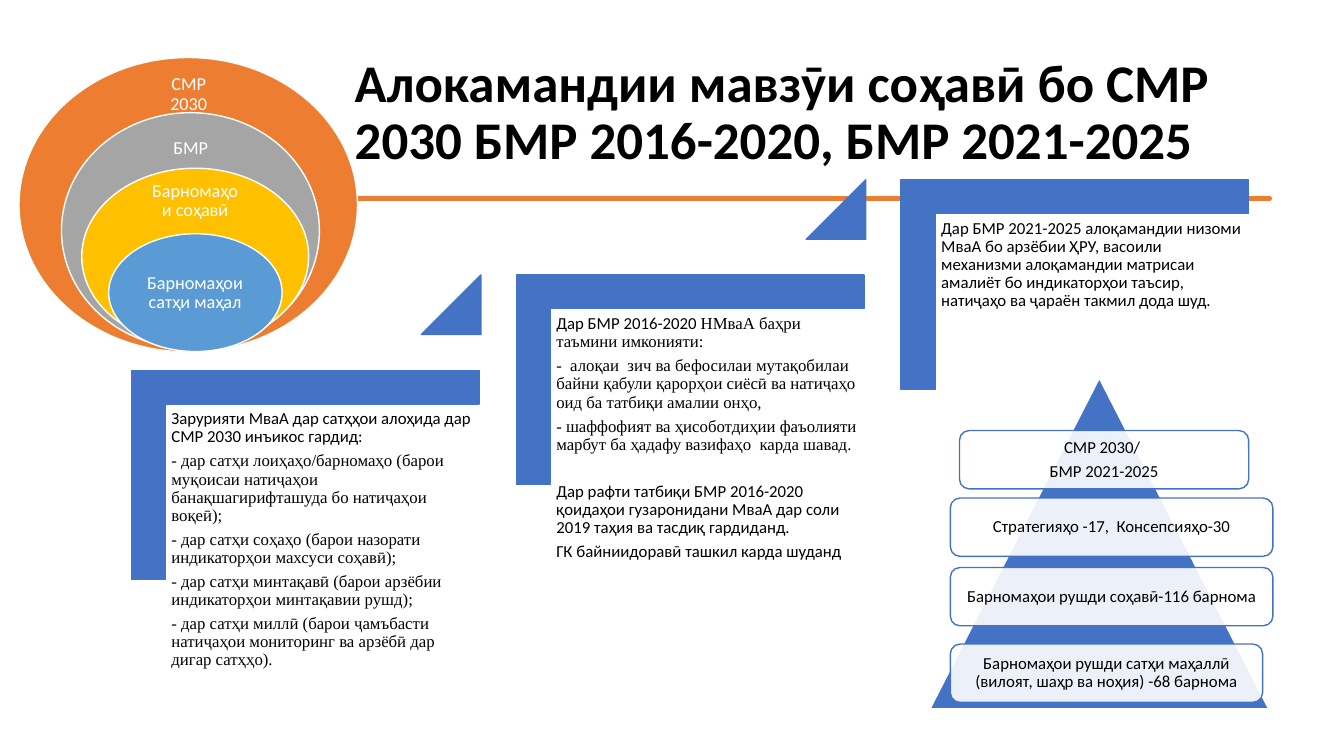
import pptx
import pptx.util
import pptx.dml.color
import pptx.enum.shapes
import pptx.enum.text
import pptx.oxml.ns
import lxml.etree

Cm = pptx.util.Cm
Pt = pptx.util.Pt
RGBColor = pptx.dml.color.RGBColor
SHAPE = pptx.enum.shapes.MSO_SHAPE
ALIGN = pptx.enum.text.PP_ALIGN
ANCHOR = pptx.enum.text.MSO_ANCHOR

BLACK = RGBColor(0x00, 0x00, 0x00)
WHITE = RGBColor(0xFF, 0xFF, 0xFF)
BLUE = RGBColor(0x44, 0x72, 0xC4)
LIGHT_BLUE = RGBColor(0x5B, 0x9B, 0xD5)
ORANGE = RGBColor(0xED, 0x7D, 0x31)
GRAY = RGBColor(0xA5, 0xA5, 0xA5)
GOLD = RGBColor(0xFF, 0xC0, 0x00)
SANS = "Calibri"
SERIF = "Times New Roman"


def write(frame, paras, size=12, color=BLACK, bold=False, align=ALIGN.LEFT,
          anchor=ANCHOR.TOP, margin=0.13, after=4.2):
    frame.word_wrap = True
    frame.auto_size = pptx.enum.text.MSO_AUTO_SIZE.NONE
    frame.vertical_anchor = anchor
    frame.margin_left = frame.margin_right = Cm(margin)
    frame.margin_top = frame.margin_bottom = Cm(margin)
    for index, spans in enumerate(paras):
        para = frame.paragraphs[0] if index == 0 else frame.add_paragraph()
        para.alignment = align
        para.line_spacing = 0.9
        para.space_before = Pt(0)
        para.space_after = Pt(after)
        for text, font in spans:
            span = para.add_run()
            span.text = text
            span.font.name = font
            span.font.size = Pt(size)
            span.font.bold = bold
            span.font.color.rgb = color


def add_figure(kind, box, fill, line):
    figure = page.shapes.add_shape(kind, *map(Cm, box))
    figure.shadow.inherit = False
    figure.fill.solid()
    figure.fill.fore_color.rgb = fill
    figure.line.color.rgb = line
    figure.line.width = Pt(1)
    return figure


deck = pptx.Presentation()
deck.slide_width = Cm(33.87)
deck.slide_height = Cm(19.05)
page = deck.slides.add_slide(deck.slide_layouts[5])

title = page.shapes.title
title.left, title.top, title.width, title.height = map(Cm, (8.69, 1.02, 22.86, 3.68))
write(title.text_frame,
      [[("Алокамандии мавзӯи соҳавӣ бо СМР 2030 БМР 2016-2020, БМР 2021-2025", SANS)]],
      size=37.8, bold=True, anchor=ANCHOR.MIDDLE, margin=0.25, after=0)

upper_edge = [(1.85, 4.65), (3.2, 4.65), (5, 4.66), (7.2, 4.63), (9.2, 4.66),
              (10.4, 4.62), (11.6, 4.62), (12.6, 4.68), (14.5, 4.63), (16.4, 4.66),
              (18.9, 4.64), (20.5, 4.67), (22, 4.64), (23.4, 4.62), (24.6, 4.67),
              (26.1, 4.65), (28, 4.62), (29.2, 4.66), (30.4, 4.64), (32, 4.65)]
lower_edge = [(32, 4.7), (30.7, 4.73), (28.8, 4.69), (27.2, 4.74), (25.4, 4.7),
              (23.5, 4.72), (20.3, 4.7), (18.9, 4.74), (17.2, 4.69), (15, 4.7),
              (13.1, 4.73), (11.6, 4.7), (10.5, 4.73), (8.3, 4.69), (6.4, 4.72),
              (4.6, 4.73), (1.85, 4.7)]
outline = page.shapes.build_freeform(*upper_edge[0], scale=Cm(1))
outline.add_line_segments(upper_edge[1:] + lower_edge, close=True)
underline = outline.convert_to_shape()
underline.shadow.inherit = False
underline.fill.solid()
underline.fill.fore_color.rgb = ORANGE
underline.line.color.rgb = ORANGE
underline.line.width = Pt(3.25)

steps = [
    [[("Зарурияти МваА дар сатҳҳои алоҳида дар СМР 2030 инъикос гардид:", SANS)],
     [("- дар сатҳи лоиҳаҳо/барномаҳо (барои муқоисаи натиҷаҳои банақшагирифташуда бо натиҷаҳои воқеӣ);", SERIF)],
     [("- дар сатҳи соҳаҳо (барои назорати индикаторҳои махсуси соҳавӣ);", SERIF)],
     [("- дар сатҳи минтақавӣ (барои арзёбии индикаторҳои минтақавии рушд);", SERIF)],
     [("- дар сатҳи миллӣ (барои ҷамъбасти натиҷаҳои мониторинг ва арзёбӣ дар дигар сатҳҳо).", SERIF)]],
    [[("Дар БМР 2016-2020 ", SANS), ("НМваА баҳри таъмини имконияти:", SERIF)],
     [("-  алоқаи  зич ва бефосилаи мутақобилаи байни қабули қарорҳои сиёсӣ ва натиҷаҳо оид ба татбиқи амалии онҳо,", SERIF)],
     [("- шаффофият ва ҳисоботдиҳии фаъолияти марбут ба ҳадафу вазифаҳо  карда шавад.", SERIF)],
     [("Дар рафти татбиқи БМР 2016-2020 қоидаҳои гузаронидани МваА дар соли 2019 таҳия ва тасдиқ гардиданд.", SANS)],
     [("ГК байниидоравӣ ташкил карда шуданд", SANS)]],
    [[("Дар БМР 2021-2025 алоқамандии низоми МваА бо арзёбии ҲРУ, васоили механизми алоқамандии матрисаи амалиёт бо индикаторҳои таъсир, натиҷаҳо ва ҷараён такмил дода шуд.", SANS)]],
]
step_frames = []
for index, paras in enumerate(steps):
    right, up = 9.7 * index, 2.4 * index
    corner = add_figure(SHAPE.HALF_FRAME, (5.05 + right, 7.59 - up, 5.28, 8.76), BLUE, BLUE)
    corner.rotation = 90
    corner.adjustments[0] = corner.adjustments[1] = 0.161
    corner.element.spPr.find(pptx.oxml.ns.qn("a:prstGeom")).set("prst", "corner")
    box = page.shapes.add_textbox(Cm(4.19 + right), Cm(10.21 - up), Cm(7.92), Cm(6.93))
    write(box.text_frame, paras)
    step_frames.append(box.text_frame)
    if index < len(steps) - 1:
        arrow = add_figure(SHAPE.ISOSCELES_TRIANGLE,
                           (10.62 + right, 6.93 - up, 1.5, 1.5), BLUE, BLUE)
        arrow.adjustments[0] = 1
step_frames[1].paragraphs[3].space_before = Pt(16.5)

rings = [
    ("СМР 2030", ORANGE, (0.48, 1.45, 8.53, 7.42), (3.56, 1.83, 2.39, 1.12)),
    ("БМР", GRAY, (1.55, 2.84, 6.5, 5.94), (3.66, 3.2, 2.29, 1.07)),
    ("Барномаҳои соҳавӣ", GOLD, (2.06, 4.24, 5.72, 4.45), (3.58, 4.57, 2.67, 0.99)),
    ("Барномаҳои сатҳи маҳал", LIGHT_BLUE, (2.74, 5.89, 4.37, 2.97), (3.38, 6.65, 3.07, 1.47)),
]
for text, color, ring_box, label_box in rings:
    add_figure(SHAPE.OVAL, ring_box, color, WHITE)
    label = page.shapes.add_textbox(*map(Cm, label_box))
    write(label.text_frame, [[(text, SANS)]], size=13, color=WHITE,
          align=ALIGN.CENTER, anchor=ANCHOR.MIDDLE, margin=0.25)

add_figure(SHAPE.ISOSCELES_TRIANGLE, (23.44, 9.53, 8.53, 8.33), BLUE, WHITE)
levels = [
    (["СМР 2030/ ", "БМР 2021-2025"], 24.18, 10.85, 7.29),
    (["Стратегияҳо -17,  Консепсияҳо-30"], 23.95, 12.55, 8.13),
    (["Барномаҳои рушди соҳавӣ-116 барнома"], 23.95, 14.3, 8.13),
    (["Барномаҳои рушди сатҳи маҳаллӣ (вилоят, шаҳр ва ноҳия) -68 барнома"], 23.95, 16.23, 7.87),
]
for lines, left, top, width in levels:
    level = add_figure(SHAPE.ROUNDED_RECTANGLE, (left, top, width, 1.47), WHITE, BLUE)
    tint = level.element.spPr.find(".//" + pptx.oxml.ns.qn("a:srgbClr"))
    lxml.etree.SubElement(tint, pptx.oxml.ns.qn("a:alpha"), val="90000")
    write(level.text_frame, [[(line, SANS)] for line in lines],
          align=ALIGN.CENTER, anchor=ANCHOR.MIDDLE, margin=0.11)

deck.save("out.pptx")
